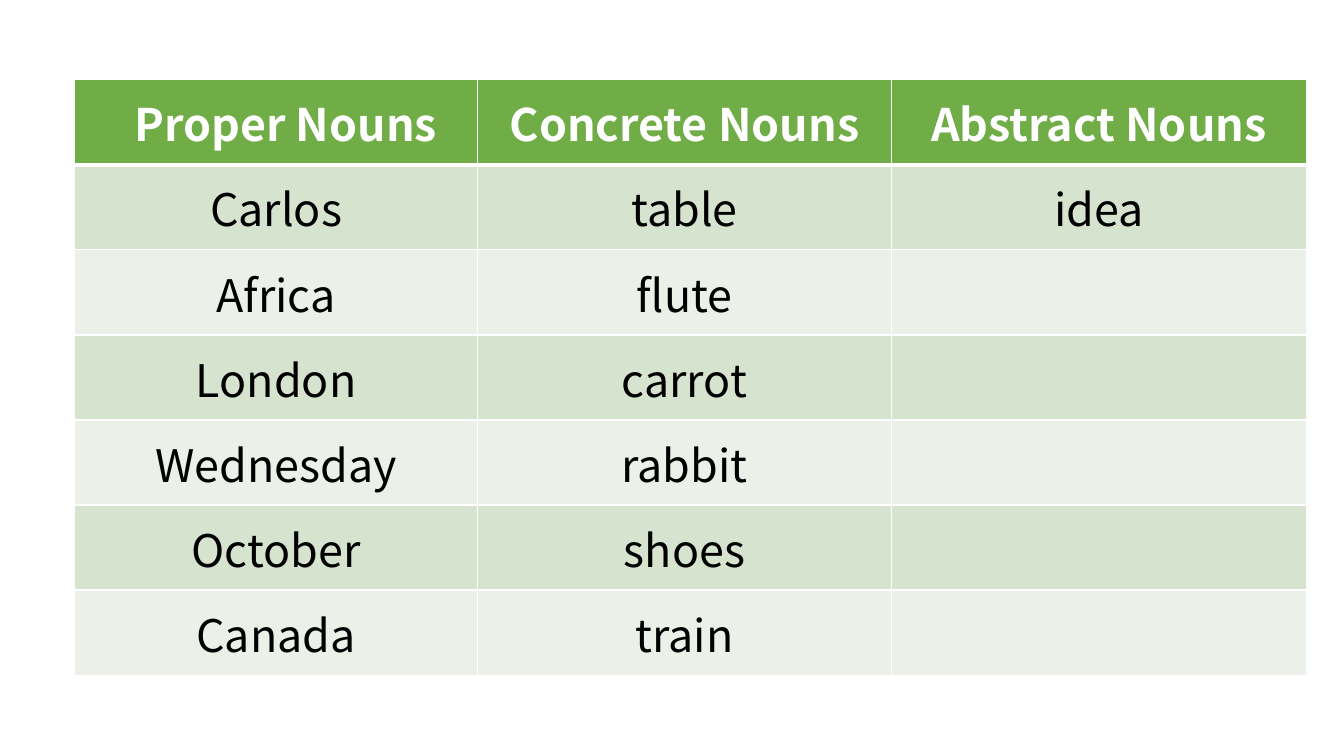
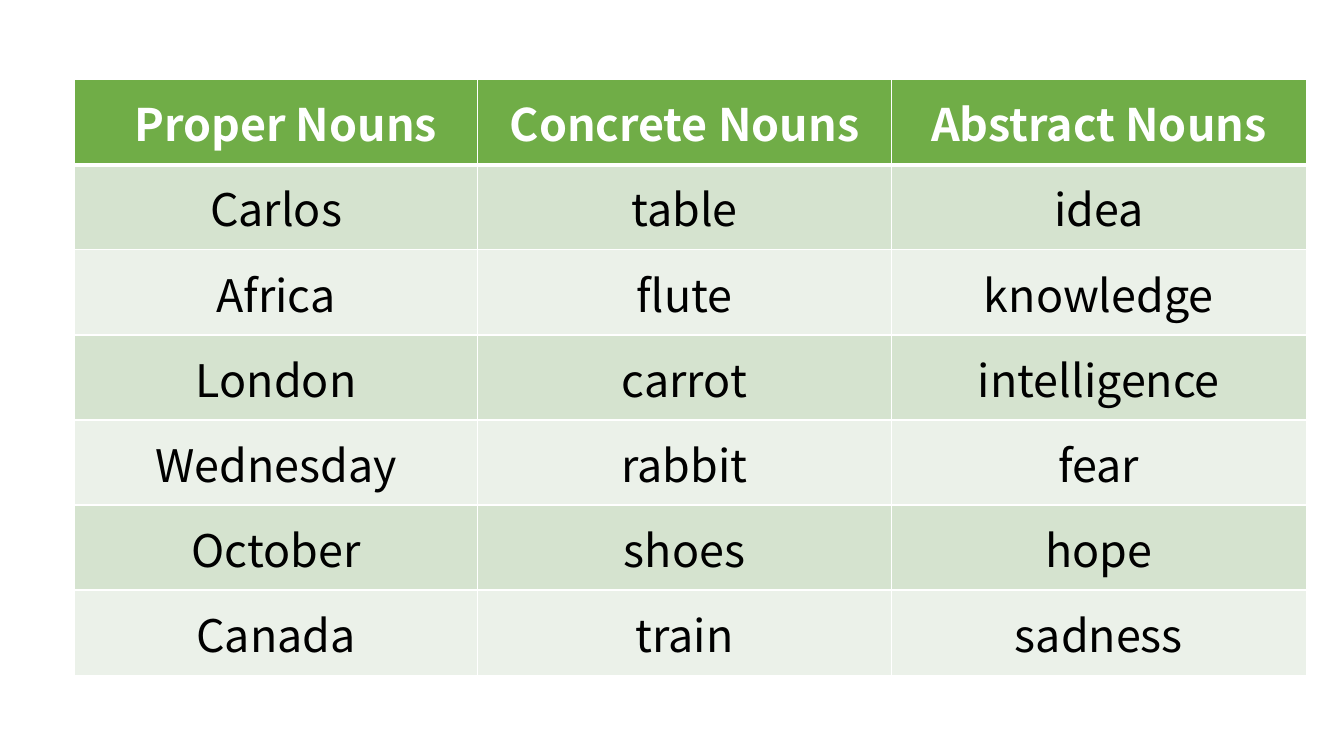
from lxml.etree import SubElement
from pptx import Presentation
from pptx.dml.color import RGBColor
from pptx.enum.text import MSO_ANCHOR, PP_ALIGN
from pptx.oxml.ns import qn
from pptx.util import Pt

GREEN = RGBColor(0x70, 0xAD, 0x47)
BAND_DARK = RGBColor(0xD5, 0xE3, 0xCF)
BAND_LIGHT = RGBColor(0xEB, 0xF1, 0xE9)
WHITE = RGBColor(0xFF, 0xFF, 0xFF)
BLACK = RGBColor(0x00, 0x00, 0x00)

FONT = "Noto Sans CJK JP"
FONT_SIZE = Pt(32)
TABLE_LEFT, TABLE_TOP = Pt(53.5), Pt(57)
COLUMN_WIDTHS = [Pt(287.5), Pt(296), Pt(296)]
ROW_HEIGHT = Pt(60.75)
THIN, THICK = Pt(1), Pt(3)
FIRST_HEADER_MARGIN = Pt(21)

HEADERS = ["Proper Nouns", "Concrete Nouns", "Abstract Nouns"]
PROPER = ["Carlos", "Africa", "London", "Wednesday", "October", "Canada"]
CONCRETE = ["table", "flute", "carrot", "rabbit", "shoes", "train"]
ABSTRACT = ["idea", "knowledge", "intelligence", "fear", "hope", "sadness"]


def set_borders(cell, top, bottom):
    """Draw white borders; call before filling, as the schema puts lines first."""
    properties = cell._tc.get_or_add_tcPr()
    for tag, width in (("lnL", THIN), ("lnR", THIN), ("lnT", top), ("lnB", bottom)):
        line = SubElement(properties, qn(f"a:{tag}"), w=str(width))
        fill = SubElement(line, qn("a:solidFill"))
        SubElement(fill, qn("a:srgbClr"), val=str(WHITE))


def write_cell(cell, text, color, bold):
    cell.vertical_anchor = MSO_ANCHOR.MIDDLE
    paragraph = cell.text_frame.paragraphs[0]
    paragraph.alignment = PP_ALIGN.CENTER
    if not text:
        return
    run = paragraph.add_run()
    run.text = text
    run.font.name = FONT
    run.font.size = FONT_SIZE
    run.font.bold = bold
    run.font.color.rgb = color


def style_cell(cell, row_index, text):
    is_header = row_index == 0
    set_borders(
        cell,
        top=THICK if row_index == 1 else THIN,
        bottom=THICK if is_header else THIN,
    )
    cell.fill.solid()
    if is_header:
        cell.fill.fore_color.rgb = GREEN
    else:
        cell.fill.fore_color.rgb = BAND_DARK if row_index % 2 else BAND_LIGHT
    write_cell(cell, text, WHITE if is_header else BLACK, is_header)


def add_noun_slide(presentation, abstract_shown):
    """Add the noun table with only the first abstract_shown abstract nouns."""
    slide = presentation.slides.add_slide(presentation.slide_layouts[6])
    abstract = [
        noun if index < abstract_shown else ""
        for index, noun in enumerate(ABSTRACT)
    ]
    rows = [HEADERS, *zip(PROPER, CONCRETE, abstract)]
    table = slide.shapes.add_table(
        len(rows), len(HEADERS), TABLE_LEFT, TABLE_TOP,
        sum(COLUMN_WIDTHS), ROW_HEIGHT * len(rows),
    ).table
    for column, width in zip(table.columns, COLUMN_WIDTHS):
        column.width = width
    for row_index, texts in enumerate(rows):
        table.rows[row_index].height = ROW_HEIGHT
        for column_index, text in enumerate(texts):
            style_cell(table.cell(row_index, column_index), row_index, text)
    table.cell(0, 0).margin_left = FIRST_HEADER_MARGIN


def main():
    presentation = Presentation()
    presentation.slide_width = Pt(960)
    presentation.slide_height = Pt(540)
    add_noun_slide(presentation, abstract_shown=1)
    add_noun_slide(presentation, abstract_shown=len(ABSTRACT))
    presentation.save("out.pptx")


if __name__ == "__main__":
    main()
